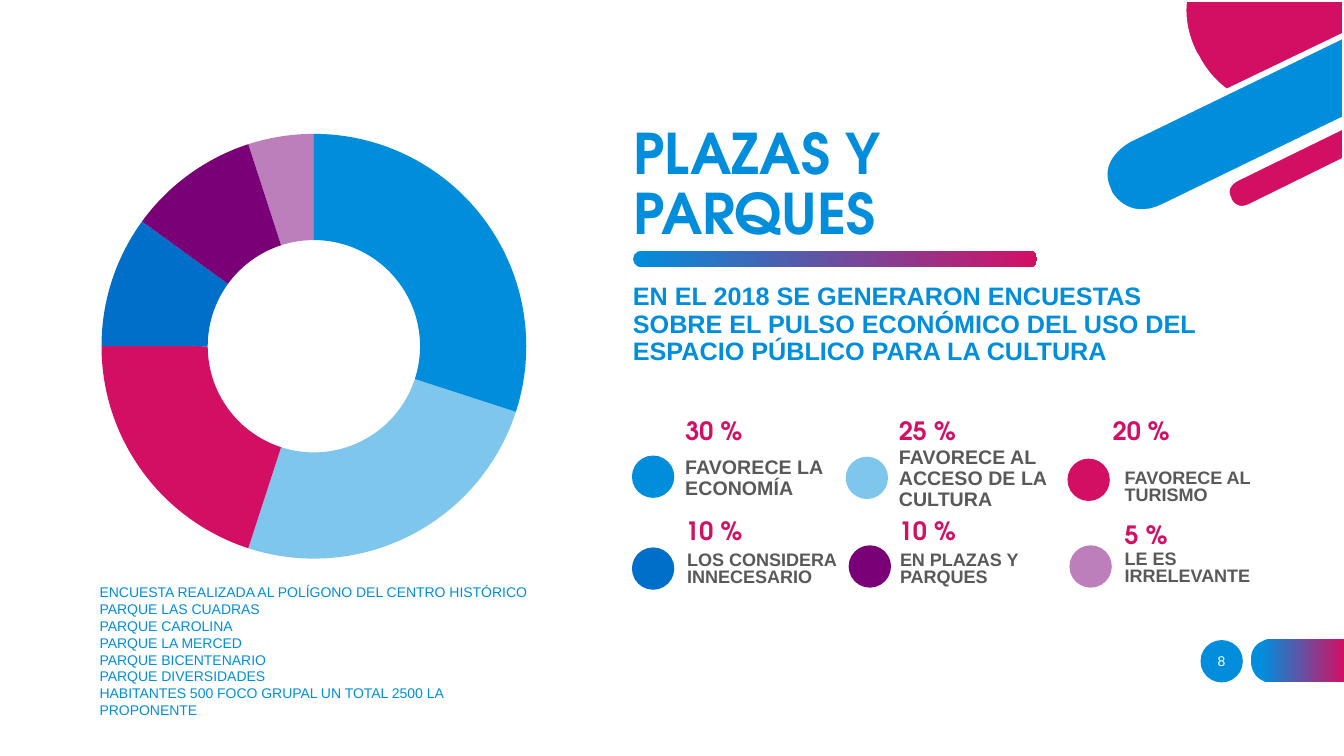
"""Build the survey slide on squares and parks with a doughnut and its legend."""
from dataclasses import dataclass

from lxml.etree import SubElement
from pptx import Presentation
from pptx.chart.data import CategoryChartData
from pptx.dml.color import RGBColor
from pptx.dml.fill import FillFormat
from pptx.enum.chart import XL_CHART_TYPE as ChartType
from pptx.enum.shapes import MSO_SHAPE as Preset
from pptx.enum.text import MSO_ANCHOR as Anchor
from pptx.enum.text import MSO_AUTO_SIZE as AutoSize
from pptx.enum.text import PP_ALIGN as Align
from pptx.oxml import parse_xml
from pptx.oxml.ns import nsdecls, qn
from pptx.shapes.autoshape import Shape
from pptx.slide import Slide
from pptx.text.text import TextFrame
from pptx.util import Pt

COLORS = {"sky": "008EDC", "pink": "D30F64", "blue": "006FC9", "purple": "7A0078",
          "gray": "595959", "white": "FFFFFF", "black": "000000"}
HEADING, BODY = "TeX Gyre Adventor", "Arial"
DOT = 30.24


@dataclass(frozen=True)
class Style:
    """Look of a text block."""
    size: float
    color: str
    font: str = BODY
    bold: bool = True
    spacing: float = 0.9
    before: float = 0
    anchor: Anchor = Anchor.TOP
    align: Align = Align.LEFT


@dataclass(frozen=True)
class Answer:
    """One survey answer with its legend positions."""
    share: int
    label: str
    color: str
    opacity: int
    dot_at: tuple[float, float]
    share_at: tuple[float, float]
    label_at: tuple[float, float]
    style: Style


@dataclass(frozen=True)
class Ornament:
    """A closed outline whose steps are points or cubic curves."""
    start: tuple[float, float]
    steps: tuple[tuple[float, ...], ...]
    color: str


TITLE = Style(40, "sky", HEADING, anchor=Anchor.BOTTOM)
INTRO = Style(18, "sky", before=10)
SHARE = Style(18, "pink", HEADING, before=10, anchor=Anchor.BOTTOM)
LARGE = Style(14, "gray", before=6)
SMALL = Style(12.9, "gray", spacing=0.8, before=6)
SOURCE = Style(10, "sky", bold=False, spacing=1, anchor=Anchor.MIDDLE)
PAGE = Style(10, "white", bold=False, spacing=1, anchor=Anchor.MIDDLE, align=Align.CENTER)

ANSWERS = (
    Answer(30, "FAVORECE LA ECONOMÍA", "sky", 100,
           (451.4, 325.4), (482.4, 293), (482.4, 323.3), LARGE),
    Answer(25, "FAVORECE AL ACCESO DE LA CULTURA", "sky", 50,
           (604.1, 326.2), (635, 293), (635, 316.1), LARGE),
    Answer(20, "FAVORECE AL TURISMO", "pink", 100,
           (762.5, 327.6), (787.7, 293), (796.3, 332.6), SMALL),
    Answer(10, "LOS CONSIDERA INNECESARIO", "blue", 100,
           (451.4, 391), (482.4, 365), (483.8, 391), SMALL),
    Answer(10, "EN PLAZAS Y PARQUES", "purple", 100,
           (606.2, 389.5), (635, 365), (635.8, 391), SMALL),
    Answer(5, "LE ES IRRELEVANTE", "purple", 50,
           (763.9, 389.5), (796.3, 367.9), (796.3, 390.2), SMALL),
)
SURVEY_NOTES = (
    "ENCUESTA REALIZADA AL POLÍGONO DEL CENTRO HISTÓRICO",
    "PARQUE LAS CUADRAS",
    "PARQUE CAROLINA",
    "PARQUE LA MERCED",
    "PARQUE BICENTENARIO",
    "PARQUE DIVERSIDADES",
    "HABITANTES 500 FOCO GRUPAL UN TOTAL 2500 LA PROPONENTE",
)
CORNER = (
    Ornament((855.4, 40.3), ((855.4, 40.3, 861.8, 54.7, 876.2, 64.8), (960, 24.5), (960, 0),
                             (846.7, 0), (845.3, 10.8, 846.7, 23.8, 853.9, 38.2)), "pink"),
    Ornament((807.1, 100.1), ((807.1, 100.1, 781.2, 113, 792.7, 136.1), (792.7, 136.8),
                              (792.7, 136.8, 804.2, 159.8, 830.9, 146.9),
                              (960, 84.2), (960, 25.9)), "sky"),
    Ornament((960, 90.7), ((883.4, 128.2), (883.4, 128.2, 873.4, 133.2, 878.4, 141.8),
                           (878.4, 142.6), (878.4, 142.6, 882.7, 151.9, 892.8, 146.9),
                           (960, 113.8)), "pink"),
)
PAGE_TAB = Ornament((908.6, 487.4), ((960, 487.4), (960, 456.5), (908.6, 456.5),
                                     (908.6, 456.5, 893.5, 456.5, 893.5, 471.6), (893.5, 472.3),
                                     (893.5, 472.3, 893.5, 487.4, 908.6, 487.4)), "sky")


def rgb(color: str) -> RGBColor:
    """Look up a named colour."""
    return RGBColor.from_string(COLORS[color])


def paint(fill: FillFormat, color: str, opacity: int = 100) -> None:
    """Apply a solid fill, see-through below full opacity."""
    fill.solid()
    fill.fore_color.rgb = rgb(color)
    if opacity < 100:
        tint = fill._xPr.find(qn("a:solidFill"))[0]
        SubElement(tint, qn("a:alpha")).set("val", str(opacity * 1000))


def blend(shape: Shape, start: float = 0) -> None:
    """Fill a shape from sky to pink, left to right."""
    shape.fill.gradient()
    shape.fill.gradient_angle = 0
    for stop, color, position in zip(shape.fill.gradient_stops, ("sky", "pink"), (start, 1)):
        stop.color.rgb = rgb(color)
        stop.position = position


def add_preset(slide: Slide, preset: Preset, left: float, top: float,
               width: float, height: float) -> Shape:
    """Add a preset shape without line or shadow."""
    shape = slide.shapes.add_shape(preset, Pt(left), Pt(top), Pt(width), Pt(height))
    shape.shadow.inherit = False
    shape.line.fill.background()
    return shape


def add_dot(slide: Slide, at: tuple[float, float], color: str, opacity: int = 100) -> None:
    """Add a round marker."""
    paint(add_preset(slide, Preset.OVAL, *at, DOT, DOT).fill, color, opacity)


def add_ornament(slide: Slide, ornament: Ornament, pieces: int = 16) -> Shape:
    """Trace an outline, turning each curve into short segments."""
    outline, pen = [], ornament.start
    for step in ornament.steps:
        if len(step) == 6:
            knots = (pen, step[:2], step[2:4], step[4:])
            for t in (i / pieces for i in range(1, pieces + 1)):
                weights = ((1 - t) ** 3, 3 * t * (1 - t) ** 2, 3 * t * t * (1 - t), t ** 3)
                outline.append(tuple(sum(w * k[axis] for w, k in zip(weights, knots))
                                     for axis in (0, 1)))
        else:
            outline.append(step)
        pen = step[-2:]
    builder = slide.shapes.build_freeform(*(Pt(v) for v in ornament.start))
    builder.add_line_segments([(Pt(x), Pt(y)) for x, y in outline])
    shape = builder.convert_to_shape()
    shape.shadow.inherit = False
    paint(shape.fill, ornament.color)
    shape.line.fill.background()
    return shape


def write(frame: TextFrame, lines: tuple[str, ...], style: Style) -> None:
    """Write one paragraph per line in a style."""
    frame.word_wrap, frame.auto_size = True, AutoSize.NONE
    frame.vertical_anchor = style.anchor
    for index, line in enumerate(lines):
        paragraph = frame.add_paragraph() if index else frame.paragraphs[0]
        paragraph.alignment, paragraph.line_spacing = style.align, style.spacing
        paragraph.space_before = Pt(style.before)
        run = paragraph.add_run()
        run.text = line
        run.font.name, run.font.size, run.font.bold = style.font, Pt(style.size), style.bold
        run.font.color.rgb = rgb(style.color)


def add_text(slide: Slide, left: float, top: float, width: float, height: float,
             style: Style, *lines: str) -> None:
    """Add a text box."""
    box = slide.shapes.add_textbox(Pt(left), Pt(top), Pt(width), Pt(height))
    write(box.text_frame, lines, style)


def add_doughnut(slide: Slide) -> None:
    """Add the doughnut of answer shares."""
    survey = CategoryChartData()
    survey.categories = [str(number) for number in range(1, len(ANSWERS) + 1)]
    survey.add_series("Series 1", [answer.share for answer in ANSWERS])
    chart = slide.shapes.add_chart(ChartType.DOUGHNUT, Pt(62.6), Pt(85.7), Pt(323.3),
                                   Pt(323.3), survey).chart
    chart.has_legend = chart.has_title = False
    chart.font.name, chart.font.size = BODY, Pt(10)
    chart.font.color.rgb = rgb("black")
    ring = chart.plots[0]
    ring.vary_by_categories = True
    ring._element.find(qn("c:holeSize")).set("val", "52")
    for index, answer in enumerate(ANSWERS):
        wedge = ring.series[0].points[index].format
        paint(wedge.fill, answer.color, answer.opacity)
        wedge.line.fill.background()


def main() -> None:
    """Assemble and save the slide."""
    deck = Presentation()
    deck.slide_width, deck.slide_height = Pt(960), Pt(540)
    slide = deck.slides.add_slide(deck.slide_layouts[5])
    title = slide.shapes.title
    title.left, title.top, title.width, title.height = Pt(445), Pt(82.1), Pt(346.3), Pt(97.9)
    write(title.text_frame, ("PLAZAS Y PARQUES",), TITLE)

    for ornament in CORNER:
        edge = add_ornament(slide, ornament).line
        paint(edge.fill, "white")
        edge.width = Pt(2.6)
    blend(add_ornament(slide, PAGE_TAB), 0.12)
    add_dot(slide, (857.5, 457.2), "sky")
    add_text(slide, 851, 457.9, 43.2, 28.8, PAGE, "8")
    rule = add_preset(slide, Preset.ROUNDED_RECTANGLE, 452.2, 179.3, 288.7, 11.5)
    rule.adjustments[0] = 0.5
    blend(rule)

    add_doughnut(slide)
    add_text(slide, 445, 199.4, 443.5, 65.5, INTRO,
             "EN EL 2018 SE GENERARON ENCUESTAS SOBRE EL PULSO ECONÓMICO DEL USO DEL "
             "ESPACIO PÚBLICO PARA LA CULTURA")
    for answer in ANSWERS:
        add_dot(slide, answer.dot_at, answer.color, answer.opacity)
        add_text(slide, *answer.share_at, 126, 28.8, SHARE, f"{answer.share} %")
        add_text(slide, *answer.label_at, 127, 60, answer.style, answer.label)
    add_text(slide, 64.1, 450.7, 324, 28.8, SOURCE, *SURVEY_NOTES)
    deck.save("out.pptx")


if __name__ == "__main__":
    main()
